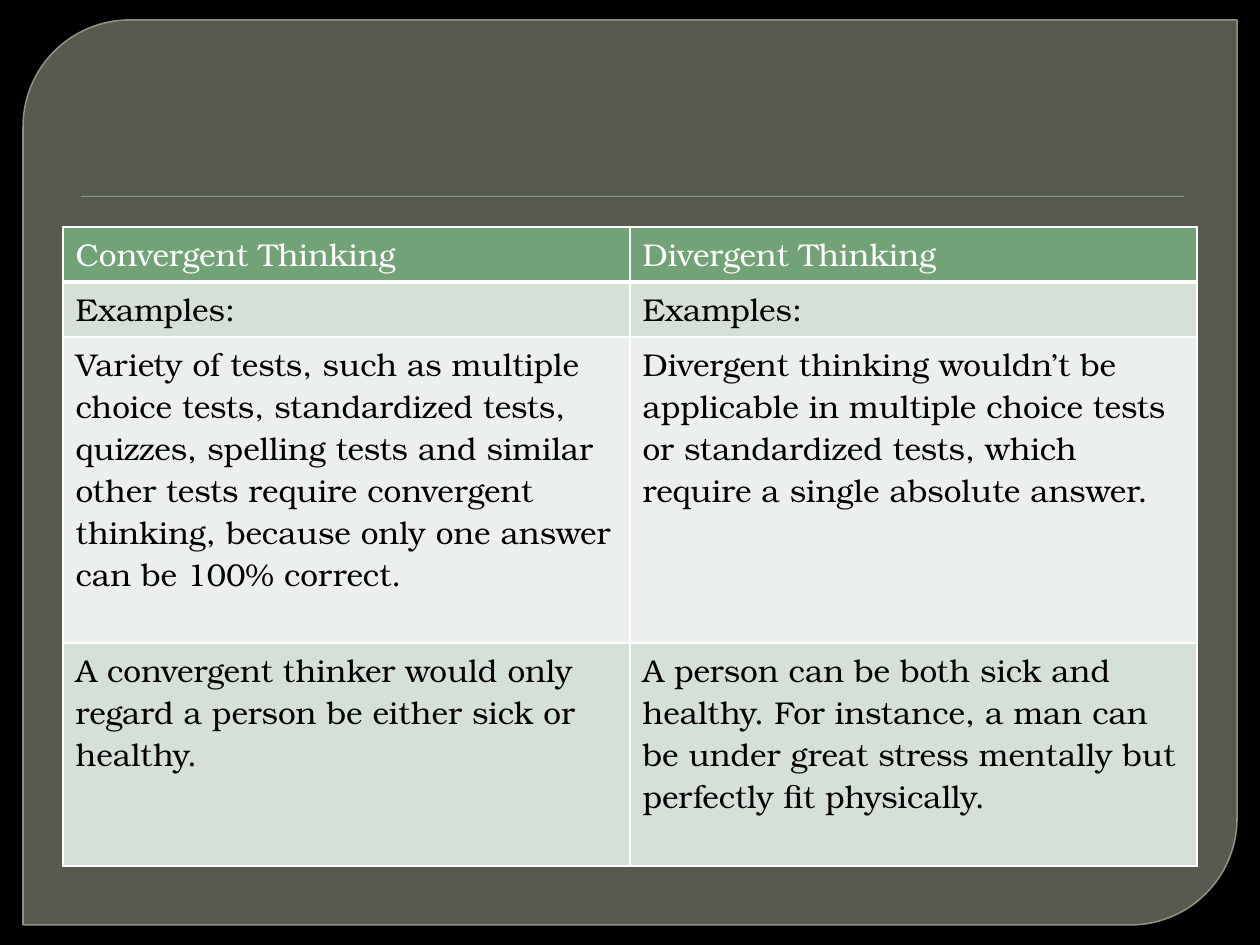
import dataclasses

import pptx
import pptx.dml.color
import pptx.enum.shapes
import pptx.oxml.ns
import pptx.util
from lxml import etree


@dataclasses.dataclass(frozen=True)
class Theme:
    background: str = "000000"
    panel: str = "888B7B"
    panel_line: str = "9DA090"
    accent: str = "72A376"
    band_dark: str = "D5E0D6"
    band_light: str = "EBF0EC"
    header_text: str = "FFFFFF"
    body_text: str = "000000"
    border: str = "FFFFFF"
    font: str = "TeX Gyre Bonum"
    text_size: int = 18


EMU_PER_PX = 914400 / 126
COMPARISON = [
    ("Convergent Thinking", "Divergent Thinking"),
    ("Examples:", "Examples:"),
    (
        "Variety of tests, such as multiple choice tests, standardized tests, "
        "quizzes, spelling tests and similar other tests require convergent "
        "thinking, because only one answer can be 100% correct.",
        "Divergent thinking wouldn’t be applicable in multiple choice tests or "
        "standardized tests, which require a single absolute answer.",
    ),
    (
        "A convergent thinker would only regard a person be either sick or healthy.",
        "A person can be both sick and healthy. For instance, a man can be under "
        "great stress mentally but perfectly fit physically.",
    ),
]


def px(length):
    return pptx.util.Emu(round(length * EMU_PER_PX))


def rgb(color):
    return pptx.dml.color.RGBColor.from_string(color)


class SlideBuilder:
    def __init__(self, slide, theme):
        self.slide = slide
        self.theme = theme

    def background(self):
        fill = self.slide.background.fill
        fill.solid()
        fill.fore_color.rgb = rgb(self.theme.background)

    def box(self, kind, left, top, width, height, color):
        shape = self.slide.shapes.add_shape(kind, px(left), px(top), px(width), px(height))
        shape.shadow.inherit = False
        shape.fill.solid()
        shape.fill.fore_color.rgb = rgb(color)
        shape.line.fill.background()
        return shape

    def panel(self, left, top, width, height):
        kind = pptx.enum.shapes.MSO_SHAPE.ROUND_2_DIAG_RECTANGLE
        shape = self.box(kind, left, top, width, height, self.theme.panel)
        shape.adjustments[0] = 0.118
        shape.adjustments[1] = 0
        shape.line.color.rgb = rgb(self.theme.panel_line)
        shape.line.width = pptx.util.Pt(0.87)
        colors = shape.element.spPr.iter(pptx.oxml.ns.qn("a:srgbClr"))
        for color, opacity in zip(list(colors), (65, 88)):
            etree.SubElement(color, pptx.oxml.ns.qn("a:alpha"), val=str(opacity * 1000))

    def rule(self, left, top, width):
        kind = pptx.enum.shapes.MSO_SHAPE.RECTANGLE
        self.box(kind, left, top, width, 1, self.theme.accent)

    def border(self, cell, side, points):
        qn = pptx.oxml.ns.qn
        properties = cell._tc.get_or_add_tcPr()
        line = etree.SubElement(properties, qn(f"a:ln{side}"), w=str(pptx.util.Pt(points)))
        fill = etree.SubElement(line, qn("a:solidFill"))
        etree.SubElement(fill, qn("a:srgbClr"), val=self.theme.border)

    def cell(self, cell, text, row):
        theme = self.theme
        widths = {"L": 1, "R": 1, "T": 3 if row == 1 else 1, "B": 3 if row == 0 else 1}
        for side, points in widths.items():
            self.border(cell, side, points)
        band = theme.band_dark if row % 2 else theme.band_light
        cell.fill.solid()
        cell.fill.fore_color.rgb = rgb(band if row else theme.accent)
        cell.text_frame.text = text
        font = cell.text_frame.paragraphs[0].runs[0].font
        font.name = theme.font
        font.size = pptx.util.Pt(theme.text_size)
        font.bold = False
        font.color.rgb = rgb(theme.body_text if row else theme.header_text)

    def table(self, left, top, width, row_heights, rows):
        columns = len(rows[0])
        frame = self.slide.shapes.add_table(
            len(rows), columns, px(left), px(top), px(width), px(sum(row_heights))
        )
        table = frame.table
        table.first_row = False
        table.horz_banding = False
        for column in table.columns:
            column.width = px(width // columns)
        for index, (height, texts) in enumerate(zip(row_heights, rows)):
            table.rows[index].height = px(height)
            for position, text in enumerate(texts):
                self.cell(table.cell(index, position), text, index)


def main():
    presentation = pptx.Presentation()
    presentation.slide_width = px(1260)
    presentation.slide_height = px(945)
    slide = presentation.slides.add_slide(presentation.slide_layouts[6])
    builder = SlideBuilder(slide, Theme())
    builder.background()
    builder.panel(23, 20, 1214, 905)
    builder.rule(81, 196, 1103)
    builder.table(63, 227, 1134, [55, 55, 306, 223], COMPARISON)
    presentation.save("out.pptx")


if __name__ == "__main__":
    main()
